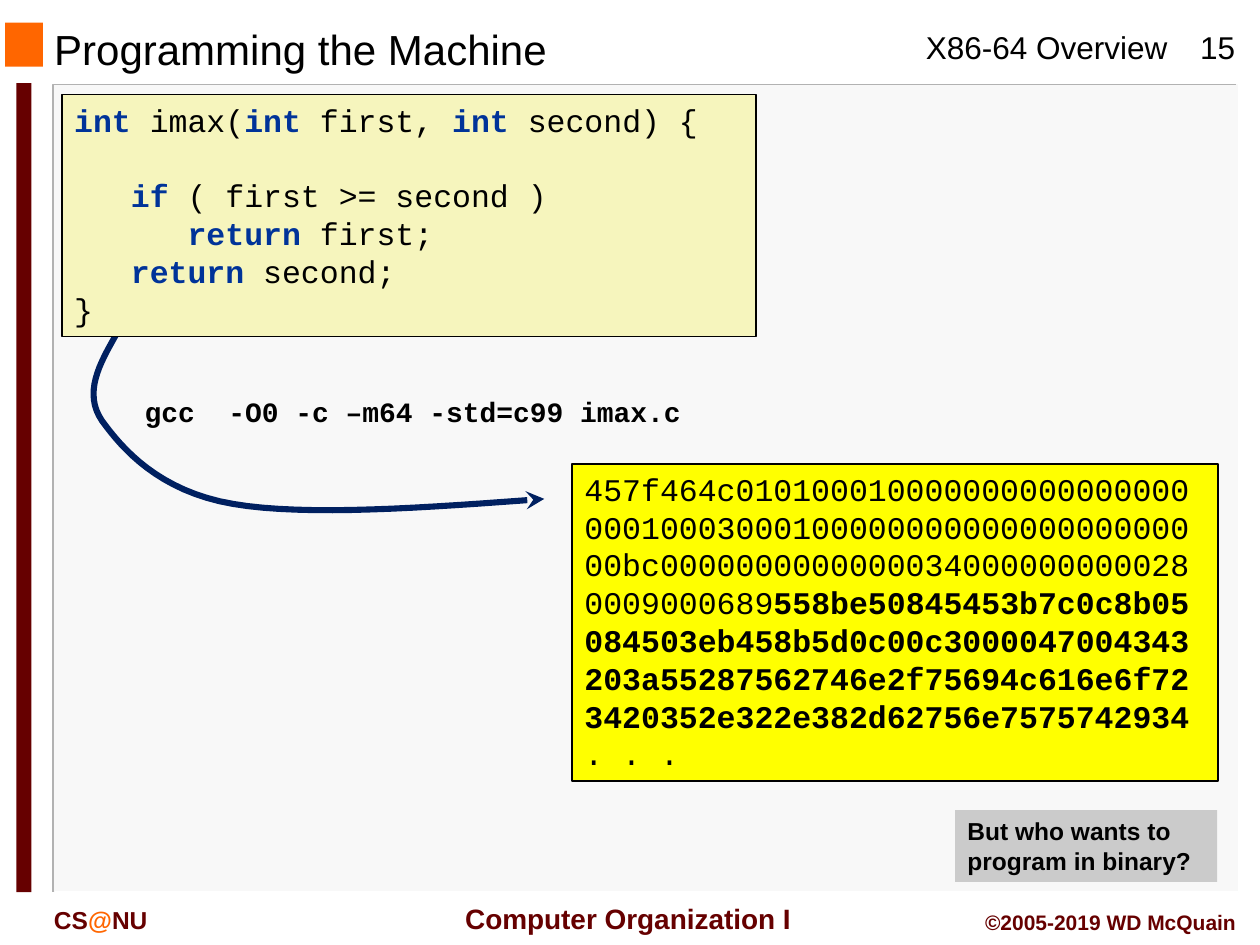
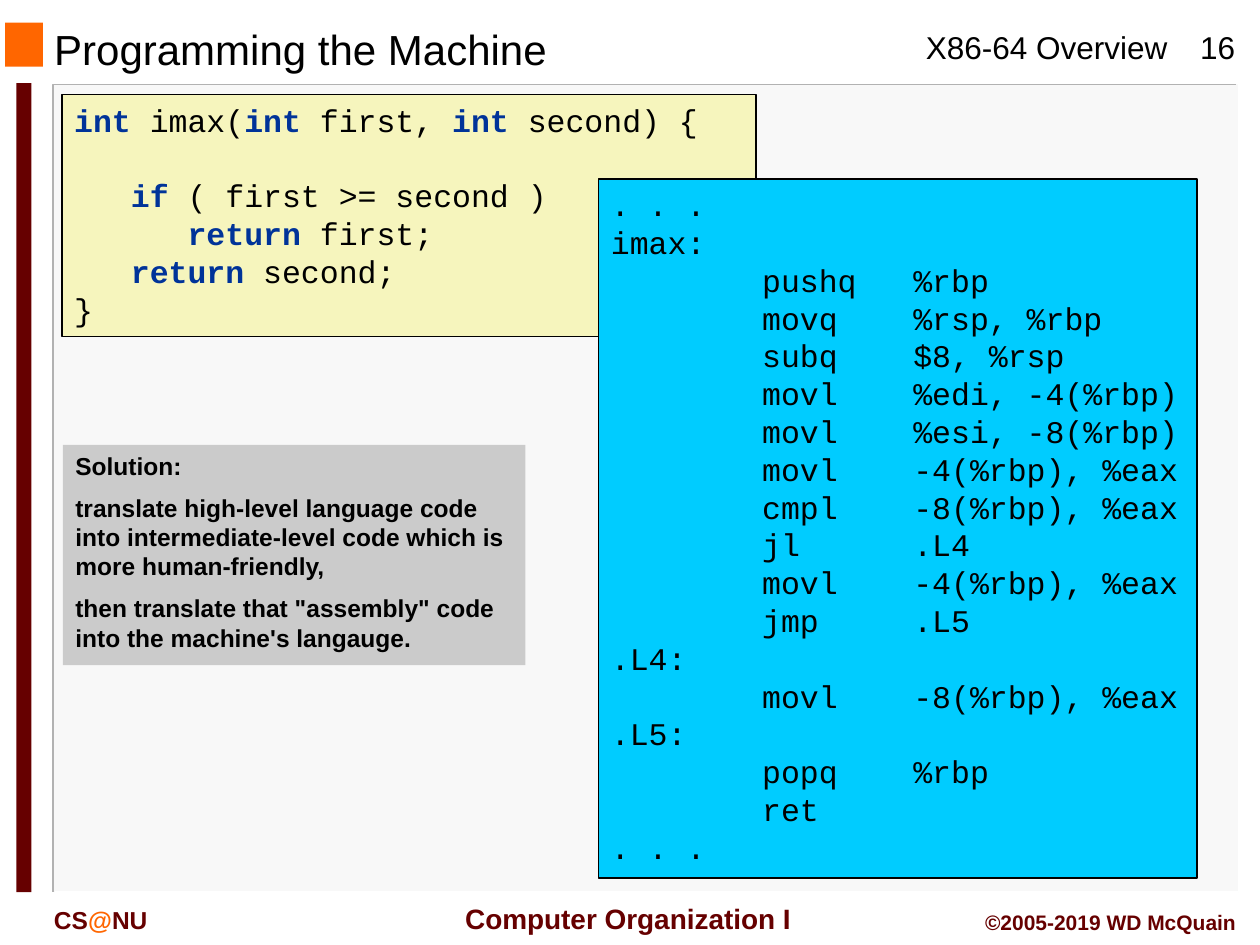
from pptx import Presentation
from pptx.dml.color import RGBColor
from pptx.enum.shapes import MSO_SHAPE
from pptx.enum.text import MSO_ANCHOR, PP_ALIGN
from pptx.oxml.ns import qn
from pptx.util import Inches, Pt
from lxml.etree import SubElement

COLORS = {
    "black": "000000", "white": "FFFFFF", "panel": "F8F8F8", "edge": "B2B2B2",
    "orange": "FF6600", "maroon": "660000", "keyword": "003399", "arrow": "002060",
    "source": "F6F5BD", "binary": "FFFF00", "assembly": "00CCFF", "note": "CBCBCB",
}

TITLE = "Programming the Machine"
TOPIC = "X86-64 Overview"
COURSE = "Computer Organization I"
SCHOOL = [("CS", "maroon"), ("@", "orange"), ("NU", "maroon")]
COPYRIGHT = "©2005-2019 WD McQuain"

KEYWORDS = {"int", "if", "return"}
SOURCE_CODE = [
    (0, ["int", " imax(", "int", " first, ", "int", " second) {"]),
    (1, ["if", " ( first >= second )"]),
    (2, ["return", " first;"]),
    (1, ["return", " second;"]),
    (0, ["}"]),
]
LINE_AFTER_GAP = 1

COMMAND = "gcc  -O0 -c –m64 -std=c99 imax.c"
BINARY = [
    ("457f464c010100010000000000000000", ""),
    ("00010003000100000000000000000000", ""),
    ("00bc0000000000000034000000000028", ""),
    ("0009000689", "558be50845453b7c0c8b05"),
    ("", "084503eb458b5d0c00c3000047004343"),
    ("", "203a55287562746e2f75694c616e6f72"),
    ("", "3420352e322e382d62756e7575742934"),
    (". . .", ""),
]
QUESTION = ["But who wants to program in binary?"]
SOLUTION = [
    "Solution:",
    "translate high-level language code into intermediate-level code which is more human-friendly,",
    "then translate that \"assembly\" code into the machine's langauge.",
]
ASSEMBLY = [
    ". . .", "imax:",
    ("pushq", "%rbp"), ("movq", "%rsp, %rbp"), ("subq", "$8, %rsp"),
    ("movl", "%edi, -4(%rbp)"), ("movl", "%esi, -8(%rbp)"),
    ("movl", "-4(%rbp), %eax"), ("cmpl", "-8(%rbp), %eax"), ("jl", ".L4"),
    ("movl", "-4(%rbp), %eax"), ("jmp", ".L5"),
    ".L4:", ("movl", "-8(%rbp), %eax"),
    ".L5:", ("popq", "%rbp"), ("ret",), ". . .",
]
ASSEMBLY_STOPS = (1.2, 2.4)
CODE_INDENT = 0.45
CODE_LINE = 21.6

ARROW_START = (0.92, 2.66)
ARROW_CURVES = [
    ((0.79, 2.89), (0.66, 3.12), (0.81, 3.34)),
    ((0.97, 3.56), (1.26, 3.9), (1.85, 4)),
    ((2.43, 4.1), (3.38, 4.03), (4.32, 3.96)),
]
CURVE_STEPS = 16


def color(name):
    return RGBColor.from_string(COLORS[name])


def add_span(para, text, size, ink="black", bold=False, font="Arial"):
    span = para.add_run()
    span.text = text
    span.font.size = Pt(size)
    span.font.name = font
    span.font.bold = bold
    span.font.color.rgb = color(ink)


def add_code(para, text, ink="black", bold=False, size=18):
    add_span(para, text, size, ink, bold, "Courier New")


def add_paragraphs(frame, count):
    for _ in range(count - 1):
        frame.add_paragraph()
    for para in frame.paragraphs:
        para.alignment = PP_ALIGN.LEFT
    return frame.paragraphs


def add_box(page, place, fill, outlined=False):
    box = page.shapes.add_shape(MSO_SHAPE.RECTANGLE, *map(Inches, place))
    box.shadow.inherit = False
    box.fill.solid()
    box.fill.fore_color.rgb = color(fill)
    if outlined:
        box.line.color.rgb = color("black")
        box.line.width = Pt(1)
    else:
        box.line.fill.background()
    box.text_frame.word_wrap = True
    box.text_frame.vertical_anchor = MSO_ANCHOR.TOP
    return box


def add_label(page, place, align=PP_ALIGN.LEFT):
    label = page.shapes.add_textbox(*map(Inches, place))
    label.text_frame.word_wrap = True
    para = label.text_frame.paragraphs[0]
    para.alignment = align
    return para


def add_path(page, points, ink, width):
    points = [(Inches(x), Inches(y)) for x, y in points]
    builder = page.shapes.build_freeform(*points[0])
    builder.add_line_segments(points[1:], close=False)
    outline = builder.convert_to_shape()
    outline.shadow.inherit = False
    outline.fill.background()
    outline.line.color.rgb = color(ink)
    outline.line.width = Pt(width)
    return outline


def add_page(deck, number):
    page = deck.slides.add_slide(deck.slide_layouts[5])
    add_box(page, (0.43, 0.67, 9.4, 6.41), "panel")
    add_path(page, [(9.81, 0.67), (0.42, 0.67), (0.42, 7.08)], "edge", 1)
    add_path(page, [(9.83, 0.67), (9.83, 7.08), (0.44, 7.08)], "white", 1)
    add_box(page, (0.04, 0.18, 0.3, 0.35), "orange")
    add_box(page, (0.13, 0.66, 0.12, 6.42), "maroon")

    add_span(add_label(page, (7.25, 0.17, 2.15, 0.4)), TOPIC, 18)
    add_span(add_label(page, (9.33, 0.17, 0.67, 0.4), PP_ALIGN.CENTER), str(number), 18)
    add_span(add_label(page, (3.53, 7.11, 2.91, 0.37), PP_ALIGN.CENTER), COURSE, 16, "maroon", True)
    add_span(add_label(page, (7.58, 7.17, 2.33, 0.3), PP_ALIGN.RIGHT), COPYRIGHT, 12, "maroon", True)
    school = add_label(page, (0.33, 7.13, 1.5, 0.33))
    for text, ink in SCHOOL:
        add_span(school, text, 14, ink, True)

    title = page.shapes.title
    title.left, title.top, title.width, title.height = map(Inches, (0.33, 0.2, 6.33, 0.38))
    title.text_frame.vertical_anchor = MSO_ANCHOR.MIDDLE
    para = title.text_frame.paragraphs[0]
    para.alignment = PP_ALIGN.LEFT
    add_span(para, TITLE, 24)
    return page


def add_source_code(page):
    box = add_box(page, (0.49, 0.75, 5.51, 1.92), "source", True)
    paras = add_paragraphs(box.text_frame, len(SOURCE_CODE))
    paras[LINE_AFTER_GAP].space_before = Pt(CODE_LINE)
    for para, (level, pieces) in zip(paras, SOURCE_CODE):
        para._p.get_or_add_pPr().set("marL", str(Inches(level * CODE_INDENT)))
        for piece in pieces:
            is_keyword = piece in KEYWORDS
            add_code(para, piece, "keyword" if is_keyword else "black", is_keyword)


def add_binary(page):
    box = add_box(page, (4.54, 3.68, 5.13, 2.52), "binary", True)
    paras = add_paragraphs(box.text_frame, len(BINARY))
    for para, (plain, strong) in zip(paras, BINARY):
        if plain:
            add_code(para, plain)
        if strong:
            add_code(para, strong, bold=True)


def add_assembly(page):
    box = add_box(page, (4.75, 1.42, 4.75, 5.55), "assembly", True)
    paras = add_paragraphs(box.text_frame, len(ASSEMBLY))
    for para, line in zip(paras, ASSEMBLY):
        if isinstance(line, str):
            add_code(para, line)
            continue
        stops = SubElement(para._p.get_or_add_pPr(), qn("a:tabLst"))
        for stop in ASSEMBLY_STOPS:
            SubElement(stops, qn("a:tab"), pos=str(Inches(stop)), algn="l")
        add_code(para, "".join("\t" + part for part in line))


def add_note(page, place, texts):
    box = add_box(page, place, "note")
    paras = add_paragraphs(box.text_frame, len(texts))
    for index, (para, text) in enumerate(zip(paras, texts)):
        para.space_before = Pt(7 if index else 0)
        add_span(para, text, 14, bold=True)


def curve_points(start, curves):
    points = [start]
    for first, second, end in curves:
        corners = (points[-1], first, second, end)
        for step in range(1, CURVE_STEPS + 1):
            t = step / CURVE_STEPS
            weights = ((1 - t) ** 3, 3 * t * (1 - t) ** 2, 3 * t ** 2 * (1 - t), t ** 3)
            points.append(tuple(
                sum(weight * corner[axis] for weight, corner in zip(weights, corners))
                for axis in (0, 1)
            ))
    return points


def add_compile_arrow(page):
    arrow = add_path(page, curve_points(ARROW_START, ARROW_CURVES), "arrow", 3.5)
    SubElement(arrow.line._get_or_add_ln(), qn("a:tailEnd"), type="stealth")


def main():
    deck = Presentation()
    deck.slide_width, deck.slide_height = Inches(10), Inches(7.5)

    page = add_page(deck, 15)
    add_binary(page)
    add_note(page, (7.58, 6.43, 2.08, 0.57), QUESTION)
    add_compile_arrow(page)
    add_code(add_label(page, (1.05, 3.08, 5.04, 0.37)), COMMAND, bold=True, size=16)
    add_source_code(page)

    page = add_page(deck, 16)
    add_note(page, (0.5, 3.53, 3.67, 1.75), SOLUTION)
    add_source_code(page)
    add_assembly(page)

    deck.save("out.pptx")


if __name__ == "__main__":
    main()
